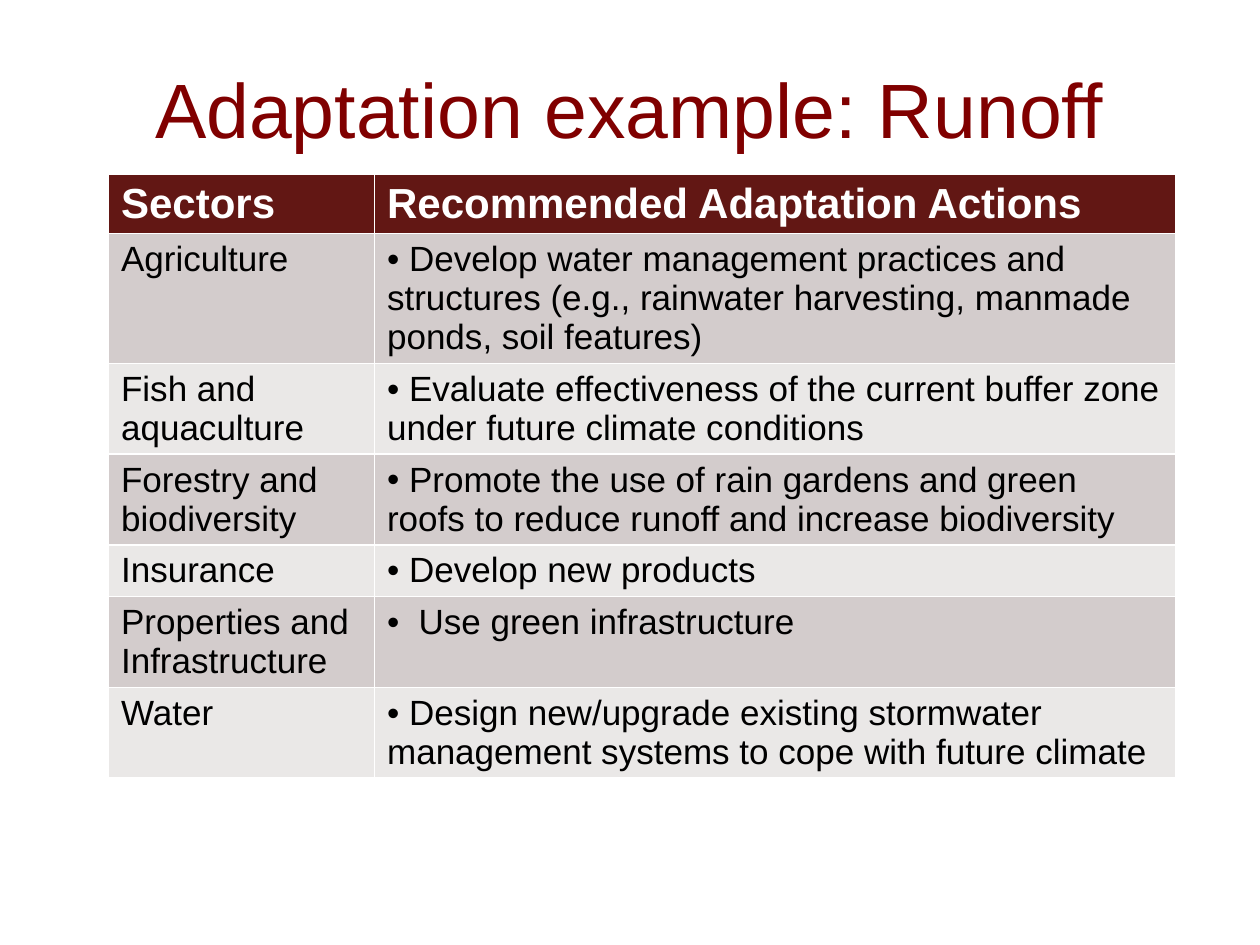
from lxml import etree
from pptx import Presentation
from pptx.dml.color import RGBColor
from pptx.enum import text
from pptx.oxml.ns import qn
from pptx.util import Pt

MAROON = RGBColor(0x80, 0x00, 0x00)
WINE = RGBColor(0x62, 0x17, 0x14)
ROSE = RGBColor(0xD3, 0xCC, 0xCC)
PALE = RGBColor(0xEA, 0xE8, 0xE7)
WHITE = RGBColor(0xFF, 0xFF, 0xFF)
BLACK = RGBColor(0x00, 0x00, 0x00)

ROWS = [
    ("Sectors", "Recommended Adaptation Actions", 0),
    ("Agriculture", " Develop water management practices and structures "
     "(e.g., rainwater harvesting, manmade ponds, soil features)", 0),
    ("Fish and aquaculture", " Evaluate effectiveness of the current buffer zone "
     "under future climate conditions", 0),
    ("Forestry and biodiversity", " Promote the use of rain gardens and green roofs "
     "to reduce runoff and increase biodiversity", 0),
    ("Insurance", " Develop new products", 0),
    ("Properties and Infrastructure", "Use green infrastructure", 18),
    ("Water", " Design new/upgrade existing stormwater management systems "
     "to cope with future climate", 0),
]

deck = Presentation()
deck.slide_width, deck.slide_height = Pt(720), Pt(540)
slide = deck.slides.add_slide(deck.slide_layouts[5])

title = slide.shapes.title
title.left, title.top, title.width, title.height = Pt(48), Pt(16.5), Pt(624), Pt(90)
frame = title.text_frame
frame.text = "Adaptation example: Runoff"
frame.vertical_anchor = text.MSO_ANCHOR.MIDDLE
para = frame.paragraphs[0]
para.alignment = text.PP_ALIGN.CENTER
font = para.runs[0].font
font.name, font.size, font.color.rgb = "Arial", Pt(44), MAROON

high = 29.5
table = slide.shapes.add_table(len(ROWS), 2, Pt(62), Pt(99.5), Pt(610),
                               Pt(high * len(ROWS))).table
table.columns[0].width, table.columns[1].width = Pt(152), Pt(458)

for r, (sector, action, hang) in enumerate(ROWS):
    table.rows[r].height = Pt(high)
    head = r == 0
    for c, words in enumerate((sector, action)):
        cell = table.cell(r, c)
        cell.fill.solid()
        cell.fill.fore_color.rgb = WINE if head else ROSE if r % 2 else PALE
        para = cell.text_frame.paragraphs[0]
        para.text = words
        if c and not head:
            props = para._p.get_or_add_pPr()
            props.set("marL", str(Pt(hang)))
            props.set("indent", str(-Pt(hang)))
            etree.SubElement(props, qn("a:buFont")).set("typeface", "Arial")
            etree.SubElement(props, qn("a:buChar")).set("char", "•")
        font = para.runs[0].font
        font.name, font.bold = "Arial", head
        font.size = Pt(24 if head else 20)
        font.color.rgb = WHITE if head else BLACK

deck.save("out.pptx")
